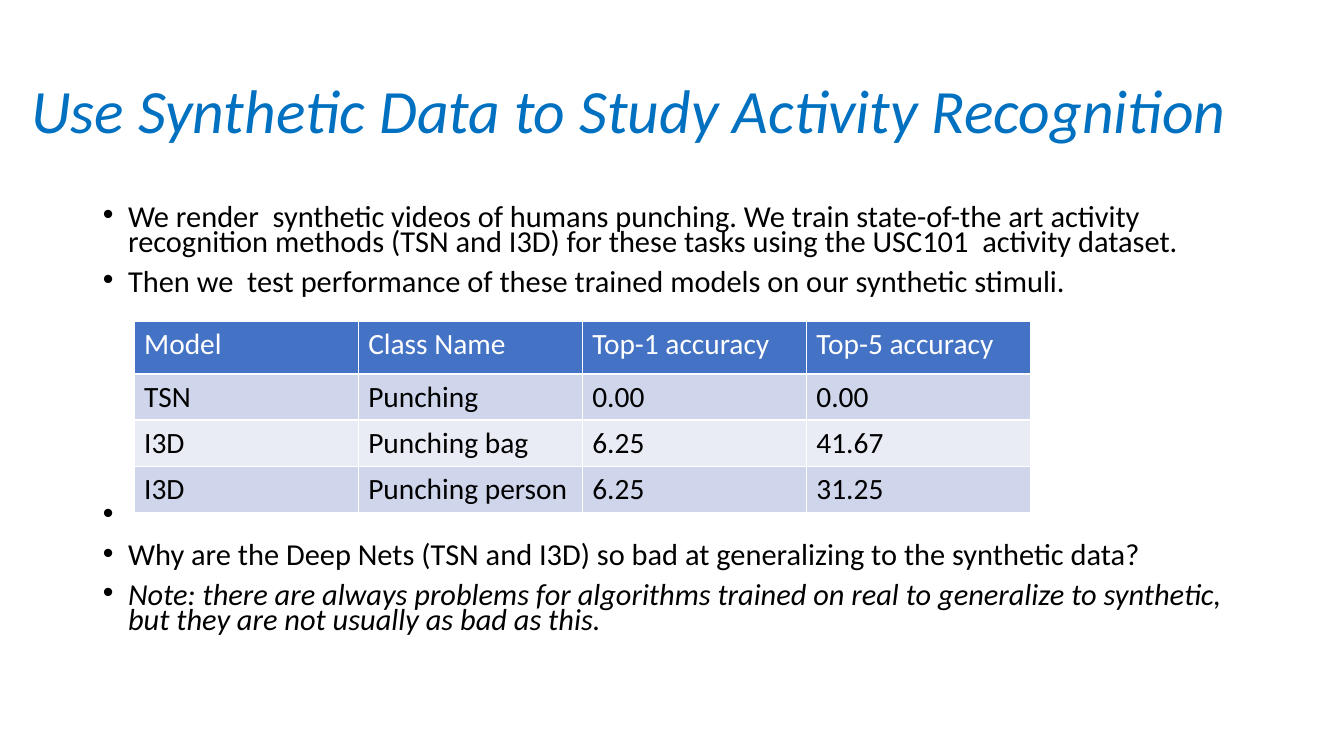
from lxml.etree import SubElement
from pptx import Presentation
from pptx.dml.color import RGBColor
from pptx.enum.text import MSO_ANCHOR, MSO_AUTO_SIZE, PP_ALIGN
from pptx.oxml.ns import qn
from pptx.util import Inches, Pt

FONT = "Calibri"
COLORS = {
    "title": "0070C0",
    "text": "000000",
    "light": "FFFFFF",
    "head": "4472C4",
    "odd": "CFD5EA",
    "even": "E9EBF5",
}
TITLE = "Use Synthetic Data to Study Activity Recognition"
GAP = 10
TABLE_GAP = 149
POINTS = [
    ("We render  synthetic videos of humans punching. We train state-of-the art "
     "activity recognition methods (TSN and I3D) for these tasks using the "
     "USC101  activity dataset.", GAP, False),
    ("Then we  test performance of these trained models on our synthetic stimuli.",
     GAP, False),
    (" ", TABLE_GAP, False),
    ("Why are the Deep Nets (TSN and I3D) so bad at generalizing to the "
     "synthetic data?", GAP, False),
    ("Note: there are always problems for algorithms trained on real to "
     "generalize to synthetic, but they are not usually as bad as this.", GAP, True),
]
ROWS = [
    ("Model", "Class Name", "Top-1 accuracy", "Top-5 accuracy"),
    ("TSN", "Punching", "0.00", "0.00"),
    ("I3D", "Punching bag", "6.25", "41.67"),
    ("I3D", "Punching person", "6.25", "31.25"),
]
HEIGHTS = [0.52, 0.45, 0.45, 0.45]


def paint(name):
    return RGBColor.from_string(COLORS[name])


def add_run(para, text, size, color, italic=False):
    run = para.add_run()
    run.text = text
    font = run.font
    font.name = FONT
    font.size = Pt(size)
    font.bold = False
    font.italic = italic
    font.color.rgb = paint(color)


def place(shape, box):
    shape.left, shape.top, shape.width, shape.height = map(Inches, box)


def add_bullet(para):
    props = para._p.get_or_add_pPr()
    props.set("marL", str(Inches(0.25)))
    props.set("indent", str(-Inches(0.25)))
    SubElement(props, qn("a:buFont")).set("typeface", "Arial")
    SubElement(props, qn("a:buChar")).set("char", "•")


def fill_title(slide, box):
    title = slide.shapes.title
    place(title, box)
    frame = title.text_frame
    frame.auto_size = MSO_AUTO_SIZE.NONE
    frame.vertical_anchor = MSO_ANCHOR.MIDDLE
    para = frame.paragraphs[0]
    para.alignment = PP_ALIGN.LEFT
    para.line_spacing = 0.9
    add_run(para, TITLE, 44, "title", True)


def fill_body(slide, box):
    body = slide.placeholders[1]
    place(body, box)
    frame = body.text_frame
    frame.auto_size = MSO_AUTO_SIZE.NONE
    frame.vertical_anchor = MSO_ANCHOR.TOP
    for index, (text, gap, italic) in enumerate(POINTS):
        para = frame.add_paragraph() if index else frame.paragraphs[0]
        para.line_spacing = 0.7
        para.space_before = Pt(gap)
        add_bullet(para)
        add_run(para, text, 21.7, "text", italic)


def add_scores(slide, box):
    count = len(ROWS[0])
    table = slide.shapes.add_table(len(ROWS), count, *map(Inches, box)).table
    for column in table.columns:
        column.width = Inches(box[2] / count)
    for index, (row, height) in enumerate(zip(ROWS, HEIGHTS)):
        table.rows[index].height = Inches(height)
        fill = "odd" if index % 2 else "even" if index else "head"
        for column, text in enumerate(row):
            cell = table.cell(index, column)
            cell.fill.solid()
            cell.fill.fore_color.rgb = paint(fill)
            para = cell.text_frame.paragraphs[0]
            add_run(para, text, 21, "text" if index else "light")


def main():
    deck = Presentation()
    deck.slide_width = Inches(13.33)
    deck.slide_height = Inches(7.5)
    slide = deck.slides.add_slide(deck.slide_layouts[1])
    fill_title(slide, (0.21, 0.4, 13.06, 1.45))
    fill_body(slide, (0.92, 2, 11.5, 4.76))
    add_scores(slide, (1.33, 3.19, 8.89, sum(HEIGHTS)))
    deck.save("out.pptx")


if __name__ == "__main__":
    main()
